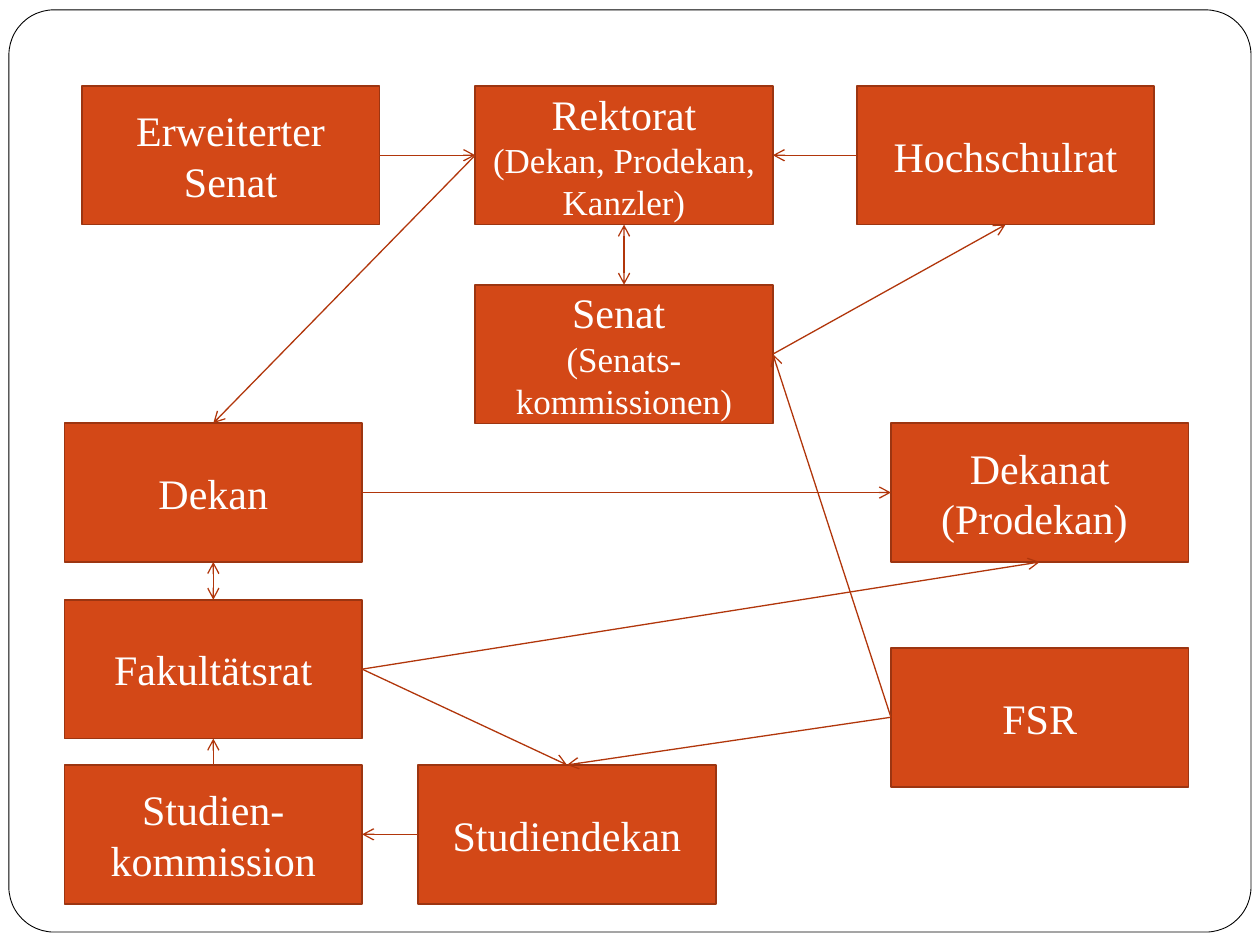
from lxml import etree
from pptx import Presentation
from pptx.dml.color import RGBColor
from pptx.enum.shapes import MSO_CONNECTOR as Connector, MSO_SHAPE as Shape
from pptx.enum.text import MSO_ANCHOR as Anchor, PP_ALIGN as Align
from pptx.oxml.ns import qn
from pptx.util import Cm, Pt

COLORS = {
    "paper": "FFFFFF",
    "frame": "000000",
    "box": "D34817",
    "border": "9C3511",
    "arrow": "B1360B",
    "text": "FFFFFF",
}
FONT = "Times New Roman"
BOX_WIDTH, BOX_HEIGHT = 6, 2.8
TOP, LEFT, BOTTOM, RIGHT = range(4)  # connection sites of a rectangle


class OrgChart:
    def __init__(self, slide):
        self.slide = slide

    def color(self, name):
        return RGBColor.from_string(COLORS[name])

    def shape(self, kind, left, top, width, height, fill, line, line_width):
        shape = self.slide.shapes.add_shape(
            kind, Cm(left), Cm(top), Cm(width), Cm(height))
        shape.shadow.inherit = False
        shape.fill.solid()
        shape.fill.fore_color.rgb = self.color(fill)
        shape.line.color.rgb = self.color(line)
        shape.line.width = Pt(line_width)
        return shape

    def frame(self):
        frame = self.shape(Shape.ROUNDED_RECTANGLE, 0.18, 0.2, 25.04, 18.59,
                           "paper", "frame", 0.5)
        frame.adjustments[0] = 0.049

    def body(self, left, top, label, sizes=(24, 24)):
        """Add the box of one governing body; sizes go line by line."""
        box = self.shape(Shape.RECTANGLE, left, top, BOX_WIDTH, BOX_HEIGHT,
                         "box", "border", 1)
        box.text_frame.vertical_anchor = Anchor.MIDDLE
        paragraph = box.text_frame.paragraphs[0]
        paragraph.text = label
        paragraph.alignment = Align.CENTER
        for run, size in zip(paragraph.runs, sizes):
            run.font.name = FONT
            run.font.size = Pt(size)
            run.font.color.rgb = self.color("text")
        return box

    def arrow(self, source, source_site, target, target_site, both=False):
        arrow = self.slide.shapes.add_connector(Connector.STRAIGHT, 0, 0, 0, 0)
        arrow.begin_connect(source, source_site)
        arrow.end_connect(target, target_site)
        arrow.line.color.rgb = self.color("arrow")
        arrow.line.width = Pt(0.75)
        properties = arrow._element.spPr
        line = properties.find(qn("a:ln"))
        for end in ("a:headEnd", "a:tailEnd") if both else ("a:tailEnd",):
            etree.SubElement(line, qn(end), type="arrow")
        etree.SubElement(properties, qn("a:effectLst"))


def main():
    presentation = Presentation()
    presentation.slide_width, presentation.slide_height = Cm(25.4), Cm(19.05)
    chart = OrgChart(presentation.slides.add_slide(presentation.slide_layouts[6]))
    chart.frame()

    # University level
    top_row, center = 1.73, 9.58
    extended_senate = chart.body(1.65, top_row, "Erweiterter\vSenat")
    rectorate = chart.body(center, top_row,
                           "Rektorat\v(Dekan, Prodekan, Kanzler)", (24, 20))
    council = chart.body(17.27, top_row, "Hochschulrat")
    senate = chart.body(center, 5.74, "Senat \v(Senats-kommissionen)", (24, 20))

    # Faculty level
    left, right, dean_row, study_row = 1.3, 17.96, 8.53, 15.42
    dean = chart.body(left, dean_row, "Dekan")
    deanery = chart.body(right, dean_row, "Dekanat\v(Prodekan) ")
    faculty_council = chart.body(left, 12.09, "Fakultätsrat")
    student_council = chart.body(right, 13.06, "FSR")
    study_commission = chart.body(left, study_row, "Studien-kommission")
    study_dean = chart.body(8.43, study_row, "Studiendekan")

    for link in (
        (senate, TOP, rectorate, BOTTOM, True),
        (council, LEFT, rectorate, RIGHT),
        (senate, RIGHT, council, BOTTOM),
        (extended_senate, RIGHT, rectorate, LEFT),
        (rectorate, LEFT, dean, TOP),
        (dean, RIGHT, deanery, LEFT),
        (faculty_council, TOP, dean, BOTTOM, True),
        (faculty_council, RIGHT, deanery, BOTTOM),
        (faculty_council, RIGHT, study_dean, TOP),
        (study_commission, TOP, faculty_council, BOTTOM),
        (study_dean, LEFT, study_commission, RIGHT),
        (student_council, LEFT, study_dean, TOP),
        (student_council, LEFT, senate, RIGHT),
    ):
        chart.arrow(*link)

    presentation.save("out.pptx")


if __name__ == "__main__":
    main()
